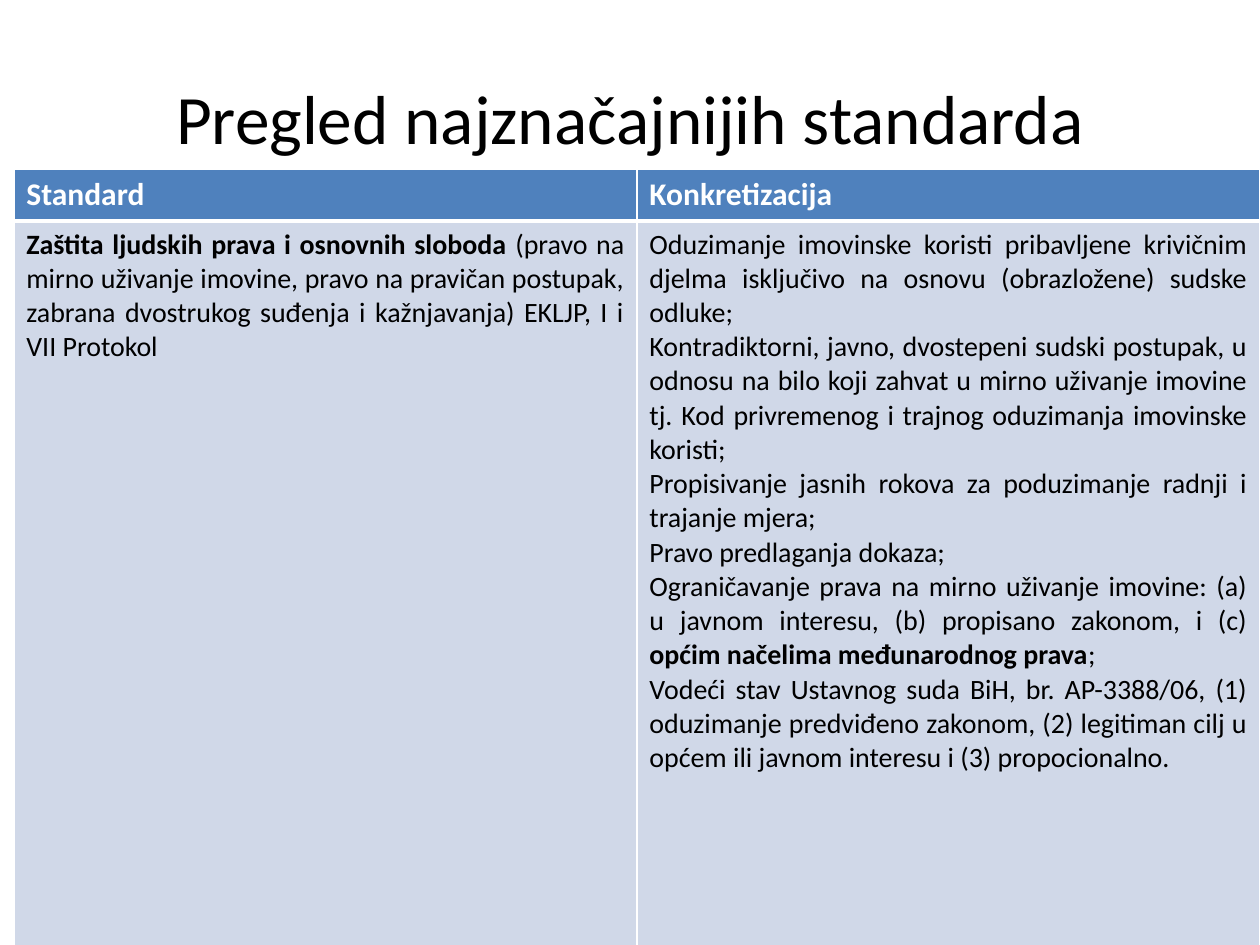
from dataclasses import dataclass

from lxml.etree import SubElement
from pptx import Presentation
from pptx.dml.color import RGBColor
from pptx.enum.text import MSO_ANCHOR, PP_ALIGN
from pptx.oxml.ns import qn
from pptx.util import Emu, Inches, Pt

HUES = {"head": "4F81BD", "body": "D0D8E8", "white": "FFFFFF", "black": "000000"}
FONT = "+mn-lt"
WIDE, HIGH = Inches(10), Inches(7.5)


@dataclass
class Run:
    """A stretch of text in one weight."""
    text: str
    bold: bool = False


@dataclass
class Look:
    """The style shared by the cells of one row."""
    fill: str
    ink: str
    size: float
    align: PP_ALIGN
    base: float
    high: float


LOOKS = [
    Look("head", "white", 18, PP_ALIGN.LEFT, 3, 0.055),
    Look("body", "black", 16, PP_ALIGN.JUSTIFY, 1, 0.924),
]

ROWS = [
    [[[Run("Standard", True)]], [[Run("Konkretizacija", True)]]],
    [
        [[
            Run("Zaštita ljudskih prava i osnovnih sloboda ", True),
            Run("(pravo na mirno uživanje imovine, pravo na pravičan postupak, "
                "zabrana dvostrukog suđenja i kažnjavanja) EKLJP, I i VII Protokol"),
        ]],
        [
            [Run("Oduzimanje imovinske koristi pribavljene krivičnim djelma "
                 "isključivo na osnovu (obrazložene) sudske odluke;")],
            [Run("Kontradiktorni, javno, dvostepeni sudski postupak, u odnosu na "
                 "bilo koji zahvat u mirno uživanje imovine tj. Kod privremenog i "
                 "trajnog oduzimanja imovinske koristi;")],
            [Run("Propisivanje jasnih rokova za poduzimanje radnji i trajanje mjera;")],
            [Run("Pravo predlaganja dokaza;")],
            [
                Run("Ograničavanje prava na mirno uživanje imovine: (a) u javnom "
                    "interesu, (b) propisano zakonom, i (c) "),
                Run("općim načelima međunarodnog prava", True),
                Run(";"),
            ],
            [Run("Vodeći stav Ustavnog suda BiH, br. AP-3388/06, (1) oduzimanje "
                 "predviđeno zakonom, (2) legitiman cilj u općem ili javnom "
                 "interesu i (3) propocionalno.")],
        ],
    ],
]


def place(shape, left: float, top: float, wide: float, high: float) -> None:
    """Set a shape's box in shares of the slide."""
    shape.left, shape.top = Emu(int(WIDE * left)), Emu(int(HIGH * top))
    shape.width, shape.height = Emu(int(WIDE * wide)), Emu(int(HIGH * high))


def write(para, runs: list[Run], size: float, ink: str, align: PP_ALIGN) -> None:
    """Fill a paragraph run by run."""
    para.alignment = align
    for item in runs:
        run = para.add_run()
        run.text = item.text
        run.font.name, run.font.size, run.font.bold = FONT, Pt(size), item.bold
        run.font.color.rgb = RGBColor.from_string(HUES[ink])


def edge(cell, base: float) -> None:
    """Draw white cell borders, the bottom one with its own width."""
    props = cell._tc.get_or_add_tcPr()
    for side, width in {"lnL": 1, "lnR": 1, "lnT": 1, "lnB": base}.items():
        line = SubElement(props, qn(f"a:{side}"), w=str(Pt(width)))
        SubElement(SubElement(line, qn("a:solidFill")), qn("a:srgbClr"), val=HUES["white"])


def draw(cell, paras: list[list[Run]], look: Look) -> None:
    """Style a cell and write its paragraphs."""
    edge(cell, look.base)
    cell.fill.solid()
    cell.fill.fore_color.rgb = RGBColor.from_string(HUES[look.fill])
    frame = cell.text_frame
    for num, runs in enumerate(paras):
        para = frame.add_paragraph() if num else frame.paragraphs[0]
        write(para, runs, look.size, look.ink, look.align)


def main() -> None:
    """Build and save the slide."""
    deck = Presentation()
    deck.slide_width, deck.slide_height = WIDE, HIGH
    slide = deck.slides.add_slide(deck.slide_layouts[5])

    title = slide.shapes.title
    place(title, 0.05, 0.04, 0.9, 1 / 6)
    title.text_frame.vertical_anchor = MSO_ANCHOR.MIDDLE
    write(title.text_frame.paragraphs[0], [Run("Pregled najznačajnijih standarda")],
          39.6, "black", PP_ALIGN.CENTER)

    left, top = 0.011, 0.179
    grid = slide.shapes.add_table(len(ROWS), len(ROWS[0]), 0, 0, WIDE, HIGH)
    place(grid, left, top, 1 - left, sum(look.high for look in LOOKS))
    for col in grid.table.columns:
        col.width = Emu(int(WIDE * (1 - left) / len(ROWS[0])))
    for row, cells, look in zip(grid.table.rows, ROWS, LOOKS):
        row.height = Emu(int(HIGH * look.high))
        for cell, paras in zip(row.cells, cells):
            draw(cell, paras, look)

    deck.save("out.pptx")


if __name__ == "__main__":
    main()
